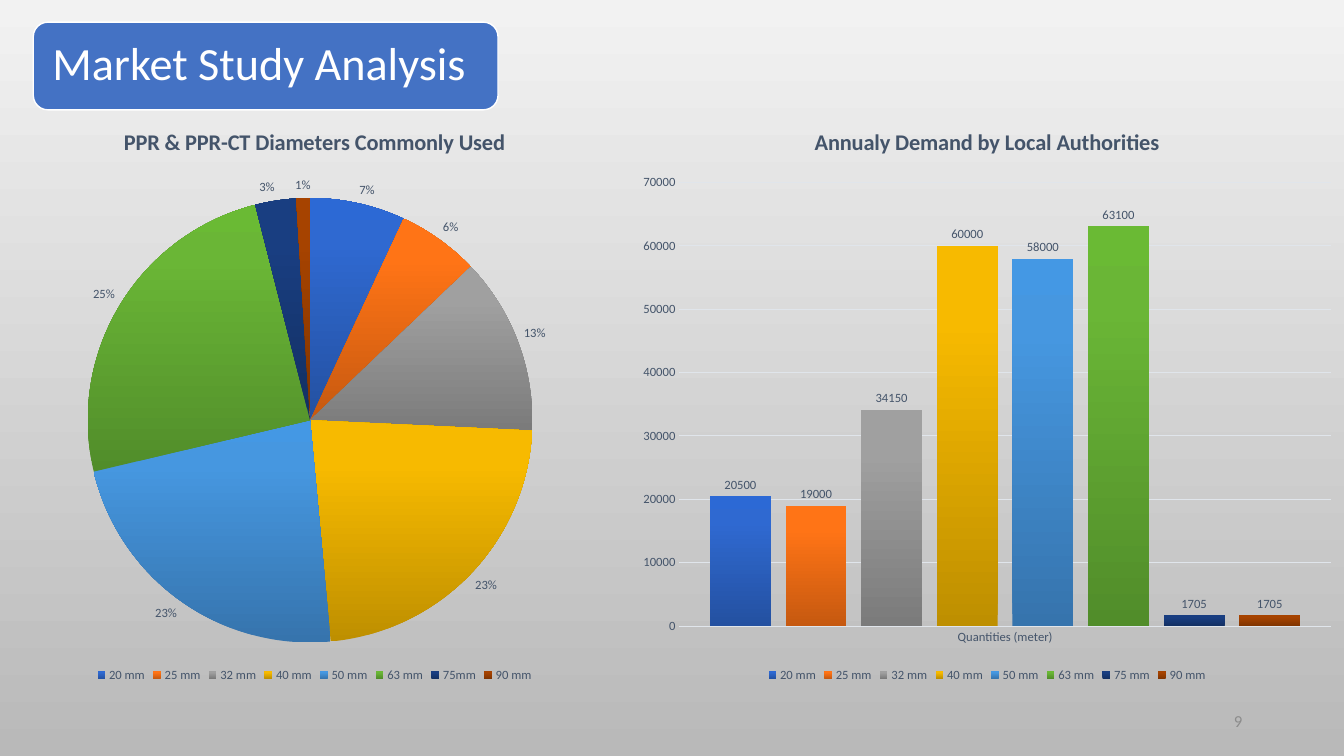
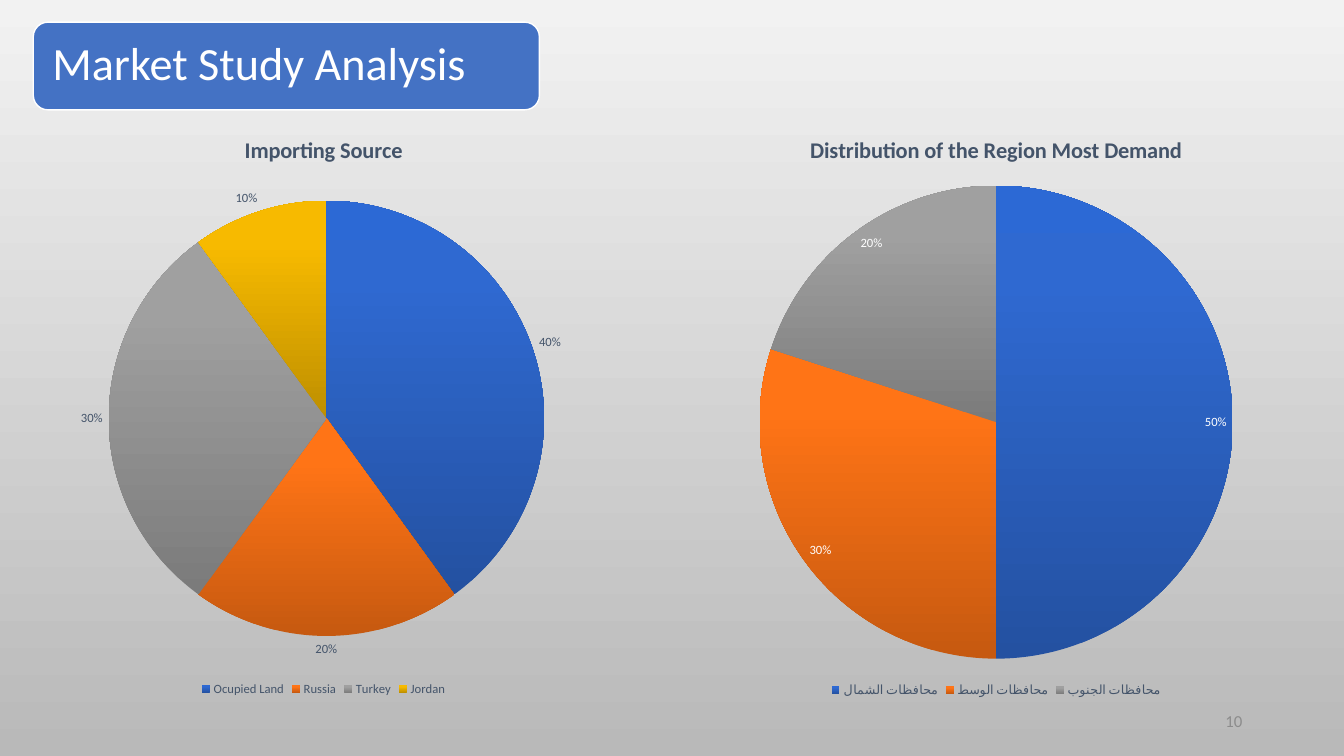
import copy

import pptx
import pptx.chart.data
import pptx.dml.color
import pptx.enum.chart
import pptx.enum.shapes
import pptx.enum.text
import pptx.util

RGB = pptx.dml.color.RGBColor
Inches = pptx.util.Inches
Pt = pptx.util.Pt
ChartType = pptx.enum.chart.XL_CHART_TYPE
LabelPosition = pptx.enum.chart.XL_LABEL_POSITION

# Shared style
FONT = "Calibri"
WHITE = RGB(0xFF, 0xFF, 0xFF)
BANNER_BLUE = RGB(0x44, 0x72, 0xC4)
SLATE = RGB(0x44, 0x54, 0x6A)
PAGE_GREY = RGB(0x8C, 0x8C, 0x8C)
GRID_GREY = RGB(0xE0, 0xE5, 0xEB)
BACKDROP = (RGB(0xF2, 0xF2, 0xF2), RGB(0xB9, 0xB9, 0xB9))
SERIES_STOPS = (0, 0.8, 1)
SERIES_GRADIENTS = [
    tuple(RGB.from_string(code) for code in codes.split())
    for codes in (
        "2451A1 2F69D1 2C69D5",
        "C65910 FF7416 FF7517",
        "7B7B7B A0A0A0 A1A1A1",
        "BE8F00 F7BA00 F8BB00",
        "3674AD 4697E0 4498E4",
        "518D2A 6AB636 6ABA34",
        "133063 193E81 173E83",
        "803400 A64300 A74400",
    )
]


def set_font(font, size, color, bold=False):
    font.name = FONT
    font.size = Pt(size)
    font.color.rgb = color
    font.bold = bold


def set_gradient(fill, colors, positions, angle):
    fill.gradient()
    first = fill.gradient_stops[0]._gs
    for _ in range(len(colors) - 2):
        first.addnext(copy.deepcopy(first))
    for stop, color, position in zip(fill.gradient_stops, colors, positions):
        stop.color.rgb = color
        stop.position = position
    fill.gradient_angle = angle


class Deck:
    def __init__(self):
        self.prs = pptx.Presentation()
        self.prs.slide_width = Inches(13.33)
        self.prs.slide_height = Inches(7.5)
        set_gradient(self.prs.slide_master.background.fill, BACKDROP, (0, 1), 270)
        self.slide = None

    def new_slide(self, heading, banner_width, page):
        self.slide = self.prs.slides.add_slide(self.prs.slide_layouts[5])
        self.banner(banner_width)
        self.heading(heading, banner_width)
        self.page_number(page)

    def banner(self, width):
        banner = self.slide.shapes.add_shape(
            pptx.enum.shapes.MSO_SHAPE.ROUNDED_RECTANGLE,
            Inches(0.33), Inches(0.22), Inches(width), Inches(0.87))
        banner.shadow.inherit = False
        banner.fill.solid()
        banner.fill.fore_color.rgb = BANNER_BLUE
        banner.line.color.rgb = WHITE
        banner.line.width = Pt(1)
        # The title text lies in front of its banner
        self.slide.shapes.title._element.addprevious(banner._element)

    def heading(self, text, banner_width):
        title = self.slide.shapes.title
        title.left, title.top = Inches(0.38), Inches(0.26)
        title.width, title.height = Inches(banner_width - 0.1), Inches(0.78)
        frame = title.text_frame
        frame.margin_left = frame.margin_right = Inches(0.14)
        frame.margin_top = frame.margin_bottom = Inches(0.14)
        frame.auto_size = pptx.enum.text.MSO_AUTO_SIZE.NONE
        self.add_line(frame, text, 33, WHITE, pptx.enum.text.PP_ALIGN.LEFT)
        frame.paragraphs[0].line_spacing = 0.9

    def page_number(self, number):
        box = self.slide.shapes.add_textbox(
            Inches(9.42), Inches(6.95), Inches(3), Inches(0.4))
        box.text_frame.word_wrap = True
        self.add_line(box.text_frame, str(number), 12, PAGE_GREY,
                      pptx.enum.text.PP_ALIGN.RIGHT)

    def add_line(self, frame, text, size, color, align):
        frame.vertical_anchor = pptx.enum.text.MSO_ANCHOR.MIDDLE
        paragraph = frame.paragraphs[0]
        paragraph.alignment = align
        run = paragraph.add_run()
        run.text = text
        set_font(run.font, size, color)

    def chart(self, kind, title, data, area):
        chart = self.slide.shapes.add_chart(
            kind, *(Inches(length) for length in area), data).chart
        chart.font.name = FONT
        chart.font.size = Pt(10)
        chart.has_title = True
        run = chart.chart_title.text_frame.paragraphs[0].add_run()
        run.text = title
        set_font(run.font, 16, SLATE, bold=True)
        chart.has_legend = True
        chart.legend.position = pptx.enum.chart.XL_LEGEND_POSITION.BOTTOM
        chart.legend.include_in_layout = False
        set_font(chart.legend.font, 9, SLATE)
        return chart

    def labels(self, plot, number_format, position, color=SLATE):
        plot.has_data_labels = True
        labels = plot.data_labels
        labels.number_format = number_format
        labels.number_format_is_linked = False
        labels.position = position
        set_font(labels.font, 9, color)
        return labels

    def pie(self, title, shares, area, label_color=SLATE, inside=False):
        data = pptx.chart.data.CategoryChartData()
        data.categories = list(shares)
        data.add_series("Series 1", list(shares.values()))
        plot = self.chart(ChartType.PIE, title, data, area).plots[0]
        plot.vary_by_categories = True
        for index, colors in enumerate(SERIES_GRADIENTS[:len(shares)]):
            slice_fill = plot.series[0].points[index].format.fill
            set_gradient(slice_fill, colors, SERIES_STOPS, 90)
        position = LabelPosition.INSIDE_END if inside else LabelPosition.OUTSIDE_END
        labels = self.labels(plot, "0%", position, label_color)
        labels.show_value = inside
        labels.show_percentage = not inside

    def columns(self, title, category, amounts, area):
        data = pptx.chart.data.CategoryChartData()
        data.categories = [category]
        for name, amount in amounts.items():
            data.add_series(name, [amount])
        chart = self.chart(ChartType.COLUMN_CLUSTERED, title, data, area)
        plot = chart.plots[0]
        plot.vary_by_categories = False
        plot.gap_width = 100
        plot.overlap = -24
        for series, colors in zip(plot.series, SERIES_GRADIENTS):
            set_gradient(series.format.fill, colors, SERIES_STOPS, 90)
        self.labels(plot, "General", LabelPosition.OUTSIDE_END).show_value = True
        for axis in (chart.category_axis, chart.value_axis):
            axis.major_tick_mark = pptx.enum.chart.XL_TICK_MARK.NONE
            axis.minor_tick_mark = pptx.enum.chart.XL_TICK_MARK.NONE
            set_font(axis.tick_labels.font, 9, SLATE)
        chart.value_axis.format.line.fill.background()
        chart.value_axis.has_major_gridlines = True
        for line in (chart.category_axis.format.line,
                     chart.value_axis.major_gridlines.format.line):
            line.color.rgb = GRID_GREY
            line.width = Pt(0.75)


def main():
    deck = Deck()

    # Diameters and demand
    deck.new_slide("Market Study Analysis", 4.61, 9)
    deck.columns(
        "Annualy Demand by Local Authorities", "Quantities (meter)",
        {"20 mm": 20500, "25 mm": 19000, "32 mm": 34150, "40 mm": 60000,
         "50 mm": 58000, "63 mm": 63100, "75 mm": 1705, "90 mm": 1705},
        (6.24, 1.05, 7.1, 5.76))
    deck.pie(
        "PPR & PPR-CT Diameters Commonly Used",
        {"20 mm": 7, "25 mm": 6, "32 mm": 13, "40 mm": 23,
         "50 mm": 23, "63 mm": 25, "75mm": 3, "90 mm": 1},
        (0, 1.05, 6.24, 5.76))

    # Sources and regions
    deck.new_slide("Market Study Analysis", 5.02, 10)
    deck.pie(
        "Importing Source",
        {"Ocupied Land": 40, "Russia": 20, "Turkey": 30, "Jordan": 10},
        (0, 1.13, 6.42, 5.82))
    deck.pie(
        "Distribution of the Region Most Demand",
        {"محافظات الشمال": 0.5, "محافظات الوسط": 0.3, "محافظات الجنوب": 0.2},
        (6.42, 1.13, 6.92, 5.82), label_color=WHITE, inside=True)

    deck.prs.save("out.pptx")


if __name__ == "__main__":
    main()
